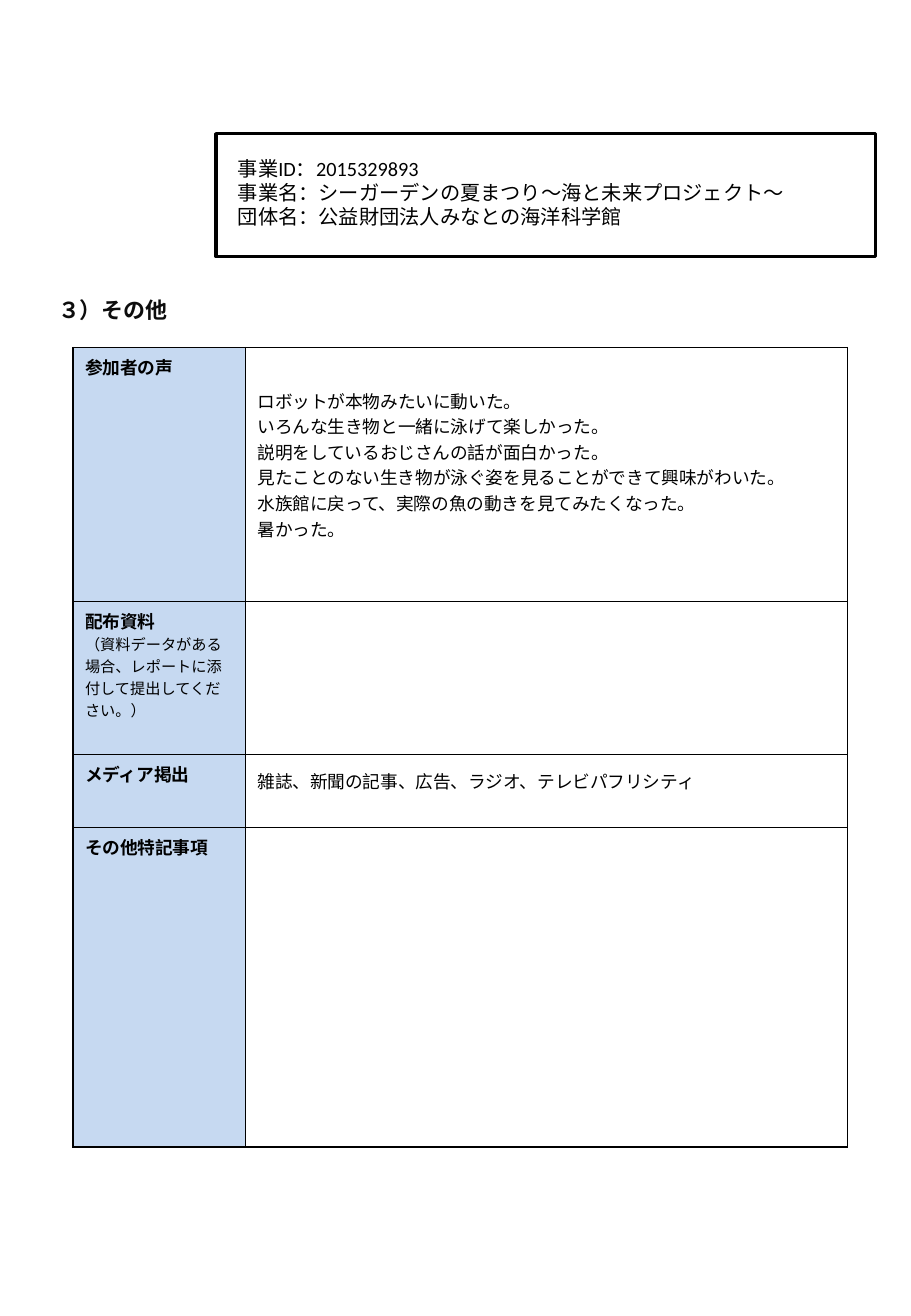
import dataclasses

import lxml.etree
import pptx
import pptx.dml.color
import pptx.enum.shapes
import pptx.enum.text
import pptx.oxml.ns
import pptx.util

WIDTH = pptx.util.Inches(7.5)
HEIGHT = pptx.util.Inches(10.83)
ANCHOR = pptx.enum.text.MSO_ANCHOR


@dataclasses.dataclass(frozen=True)
class Theme:
    font: str = "Calibri"
    ink: str = "000000"
    title: str = "0D0D0D"
    label: str = "C6D9F1"
    paper: str = "FFFFFF"
    head: float = 13
    info: float = 12
    body: float = 10.5
    note: float = 9
    rule: float = 1
    frame: float = 2


THEME = Theme()
COLS = (18.93, 66.13)
ROWS = (
    (19.3, "参加者の声", "", (
        "ロボットが本物みたいに動いた。",
        "いろんな生き物と一緒に泳げて楽しかった。",
        "説明をしているおじさんの話が面白かった。",
        "見たことのない生き物が泳ぐ姿を見ることができて興味がわいた。",
        "水族館に戻って、実際の魚の動きを見てみたくなった。",
        "暑かった。",
    )),
    (11.63, "配布資料",
     "（資料データがある場合、レポートに添付して提出してください。）", ()),
    (5.54, "メディア掲出", "",
     ("雑誌、新聞の記事、広告、ラジオ、テレビパフリシティ",)),
    (24.28, "その他特記事項", "", ()),
)
INFO = (
    "事業ID：2015329893",
    "事業名：シーガーデンの夏まつり～海と未来プロジェクト～",
    "団体名：公益財団法人みなとの海洋科学館",
)


def across(share):
    return round(WIDTH * share / 100)


def down(share):
    return round(HEIGHT * share / 100)


def place(left, top, width, height):
    return across(left), down(top), across(width), down(height)


def color(code):
    return pptx.dml.color.RGBColor.from_string(code)


def write(frame, text, size=THEME.body, bold=False, ink=THEME.ink, pitch=None):
    para = frame.paragraphs[0]
    if para.runs:
        para = frame.add_paragraph()
    if pitch:
        para.line_spacing = pptx.util.Pt(pitch)
    run = para.add_run()
    run.text = text
    run.font.name = THEME.font
    run.font.size = pptx.util.Pt(size)
    run.font.bold = bold
    run.font.color.rgb = color(ink)


def add_box(slide, area, lines, anchor=ANCHOR.TOP, grow=False, **format):
    frame = slide.shapes.add_textbox(*place(*area)).text_frame
    frame.word_wrap = True
    frame.vertical_anchor = anchor
    if grow:
        frame.auto_size = pptx.enum.text.MSO_AUTO_SIZE.SHAPE_TO_FIT_TEXT
    for line in lines:
        write(frame, line, **format)


def add_frame(slide, area):
    shape = slide.shapes.add_shape(
        pptx.enum.shapes.MSO_SHAPE.RECTANGLE, *place(*area))
    shape.shadow.inherit = False
    shape.fill.background()
    shape.line.color.rgb = color(THEME.ink)
    shape.line.width = pptx.util.Pt(THEME.frame)


def style_cell(cell, fill):
    props = cell._tc.get_or_add_tcPr()
    name = pptx.oxml.ns.qn
    for side in ("L", "R", "T", "B"):
        line = lxml.etree.SubElement(
            props, name(f"a:ln{side}"), w=str(pptx.util.Pt(THEME.rule)))
        paint = lxml.etree.SubElement(line, name("a:solidFill"))
        lxml.etree.SubElement(paint, name("a:srgbClr"), val=THEME.ink)
    cell.fill.solid()
    cell.fill.fore_color.rgb = color(fill)


def add_report(slide, left, top):
    area = place(left, top, sum(COLS), sum(row[0] for row in ROWS))
    table = slide.shapes.add_table(len(ROWS), len(COLS), *area).table
    table.first_row = False
    table.horz_banding = False
    for column, share in zip(table.columns, COLS):
        column.width = across(share)
    for index, (share, label, note, lines) in enumerate(ROWS):
        table.rows[index].height = down(share)
        key, value = table.cell(index, 0), table.cell(index, 1)
        style_cell(key, THEME.label)
        style_cell(value, THEME.paper)
        write(key.text_frame, label, bold=True)
        if note:
            write(key.text_frame, note, size=THEME.note)
        value.vertical_anchor = ANCHOR.MIDDLE
        value.margin_bottom = down(2)
        for line in lines:
            write(value.text_frame, line)


def main():
    deck = pptx.Presentation()
    deck.slide_width, deck.slide_height = WIDTH, HEIGHT
    slide = deck.slides.add_slide(deck.slide_layouts[6])
    add_report(slide, 8, 26.41)
    add_box(slide, (5.07, 22.07, 45.07, 2.86), ("３）その他",),
            anchor=ANCHOR.MIDDLE, size=THEME.head, bold=True, ink=THEME.title)
    add_box(slide, (24.8, 11.45, 67.87, 6.56), INFO,
            grow=True, size=THEME.info, pitch=14.2)
    add_frame(slide, (23.73, 10.16, 72.4, 9.33))
    deck.save("out.pptx")


if __name__ == "__main__":
    main()
